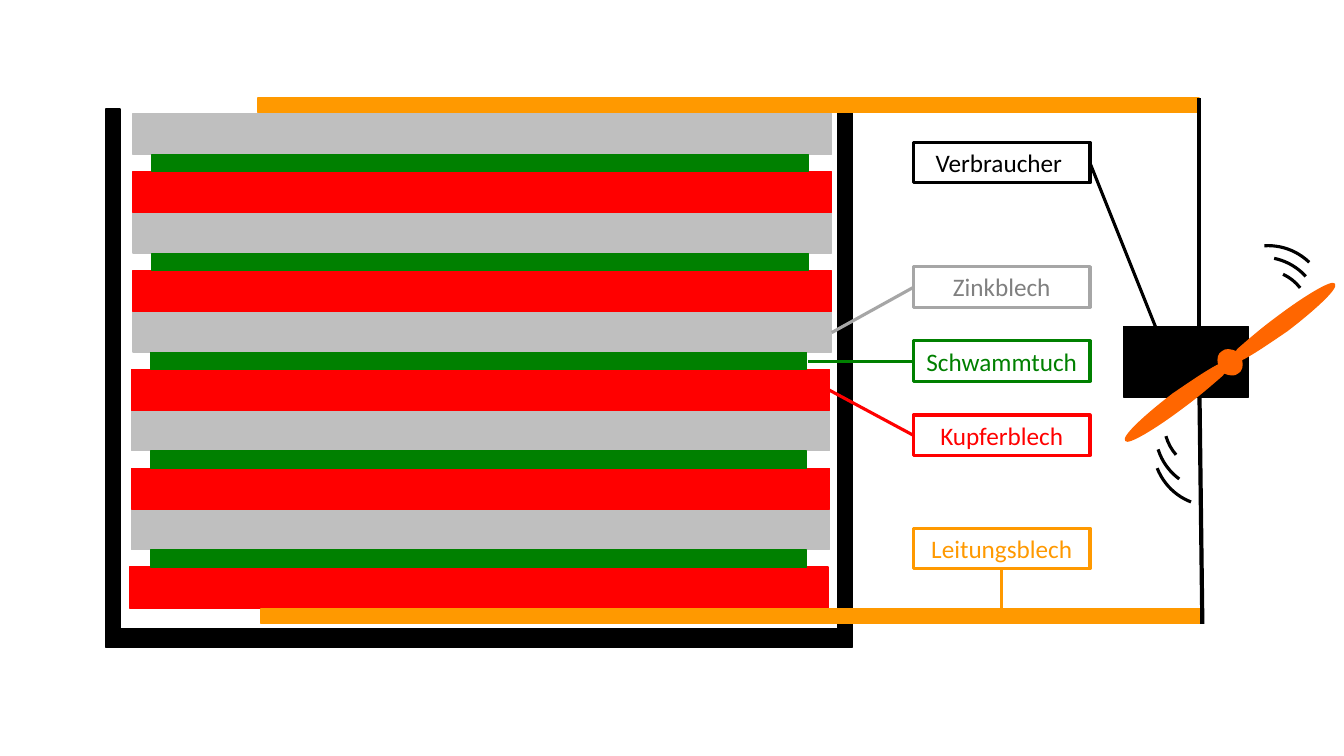
"""Build a slide showing a stacked zinc-copper battery that drives a propeller."""
import dataclasses

import lxml.etree
import pptx
import pptx.dml.color
import pptx.enum.shapes
import pptx.enum.text
import pptx.oxml.ns
import pptx.util

Cm = pptx.util.Cm
Pt = pptx.util.Pt
SHAPES = pptx.enum.shapes.MSO_SHAPE
qn = pptx.oxml.ns.qn


@dataclasses.dataclass(frozen=True)
class Theme:
    font: str = "Calibri"
    label_size: float = 18
    edge: float = 1
    stroke: float = 2.25
    wire: float = 3
    black: str = "000000"
    zinc: str = "BFBFBF"
    zinc_line: str = "A6A6A6"
    zinc_text: str = "808080"
    cloth: str = "008000"
    copper: str = "FF0000"
    conductor: str = "FF9900"
    propeller: str = "FF6600"


class Sketch:
    def __init__(self, slide, theme):
        self.shapes = slide.shapes
        self.theme = theme

    def color(self, value):
        return pptx.dml.color.RGBColor.from_string(value)

    def finish(self, shape, line, width, fill=None):
        shape.shadow.inherit = False
        shape.line.color.rgb = self.color(line)
        shape.line.width = Pt(width)
        if fill:
            shape.fill.solid()
            shape.fill.fore_color.rgb = self.color(fill)
        else:
            shape.fill.background()
        return shape

    def block(self, left, top, width, height, color):
        box = self.shapes.add_shape(
            SHAPES.RECTANGLE, Cm(left), Cm(top), Cm(width), Cm(height))
        return self.finish(box, color, self.theme.edge, color)

    def outline(self, segments, color):
        corners = [(Cm(x), Cm(y)) for segment in segments for x, y in segment]
        builder = self.shapes.build_freeform(*corners[0], scale=1.0)
        builder.add_line_segments(corners[1:], close=True)
        shape = builder.convert_to_shape()
        steps = iter(list(shape._element.iter(qn("a:lnTo"))))
        for segment in segments[1:]:
            first, *rest = [next(steps) for point in segment]
            if rest:
                first.tag = qn("a:cubicBezTo")
            for step in rest:
                first.append(step[0])
                step.getparent().remove(step)
        return self.finish(shape, color, self.theme.edge, color)

    def label(self, text, top, line, color):
        box = self.shapes.add_shape(
            SHAPES.RECTANGLE, Cm(23.02), Cm(top), Cm(4.45), Cm(1.02))
        self.finish(box, line, self.theme.stroke)
        frame = box.text_frame
        frame.word_wrap = True
        frame.auto_size = pptx.enum.text.MSO_AUTO_SIZE.SHAPE_TO_FIT_TEXT
        frame.vertical_anchor = pptx.enum.text.MSO_ANCHOR.TOP
        para = frame.paragraphs[0]
        para.alignment = pptx.enum.text.PP_ALIGN.CENTER
        span = para.add_run()
        span.text = text
        span.font.name = self.theme.font
        span.font.size = Pt(self.theme.label_size)
        span.font.color.rgb = self.color(color)

    def line(self, start, end, color, width):
        connector = self.shapes.add_connector(
            pptx.enum.shapes.MSO_CONNECTOR.STRAIGHT,
            Cm(start[0]), Cm(start[1]), Cm(end[0]), Cm(end[1]))
        connector.line.color.rgb = self.color(color)
        connector.line.width = Pt(width)
        lxml.etree.SubElement(connector._element.spPr, qn("a:effectLst"))

    def arc(self, left, top, width, height, rotation, stop):
        arc = self.shapes.add_shape(
            SHAPES.ARC, Cm(left), Cm(top), Cm(width), Cm(height))
        arc.adjustments[0] = 162
        arc.adjustments[1] = stop
        arc.rotation = rotation
        self.finish(arc, self.theme.black, self.theme.stroke)


def draw_battery(sketch, theme):
    container = [(2.67, 2.75), (3.03, 2.75), (3.03, 15.85), (21.11, 15.85),
                 (21.11, 2.75), (21.47, 2.75), (21.47, 16.31), (2.67, 16.31)]
    sketch.outline([[corner] for corner in container], theme.black)
    layers = [
        (0, 3.35, 2.86, 17.6, 1.03, theme.zinc),
        (2, 3.35, 4.33, 17.6, 1.03, theme.copper),
        (1, 3.83, 3.9, 16.54, 0.43, theme.cloth),
    ]
    for position, left, top, width, height, color in layers:
        for cell in range(5):
            drift = 0.04 * ((3 * cell + position) // 7)
            sketch.block(left - drift, top + 2.49 * cell, width, height, color)


def draw_circuit(sketch, theme):
    for left, top in [(6.58, 15.35), (6.5, 2.47)]:
        sketch.block(left, top, 23.72, 0.36, theme.conductor)
    for start, end in [((30.22, 8.89), (30.22, 2.47)), ((30.3, 15.72), (30.22, 9.32))]:
        sketch.line(start, end, theme.black, theme.wire)


def draw_labels(sketch, theme):
    labels = [
        ("Verbraucher ", 3.59, theme.black, theme.black, (27.47, 4.11), (29.29, 8.66)),
        ("Zinkblech", 6.72, theme.zinc_line, theme.zinc_text, (23.02, 7.24), (20.96, 8.38)),
        ("Schwammtuch", 8.59, theme.cloth, theme.cloth, (23.02, 9.1), (20.37, 9.1)),
        ("Kupferblech", 10.46, theme.copper, theme.copper, (23.02, 10.97), (20.9, 9.83)),
        ("Leitungsblech", 13.31, theme.conductor, theme.conductor,
         (25.24, 14.33), (25.24, 15.35)),
    ]
    for text, top, line, color, start, end in labels:
        sketch.label(text, top, line, color)
        sketch.line(start, end, line, theme.stroke)


def draw_motor(sketch, theme):
    sketch.block(28.32, 8.23, 3.15, 1.78, theme.black)
    half_propeller = [
        [(0.19, 0.27)],
        [(0.11, 0.34), (-0.01, 0.32), (-0.14, 0.27)],
        [(-0.15, 0.25)],
        [(-0.19, 0.32)],
        [(-0.42, 0.52), (-0.77, 0.83), (-1.18, 1.13)],
        [(-1.92, 1.69), (-2.58, 2.07), (-2.63, 1.97)],
        [(-2.71, 1.87), (-2.17, 1.36), (-1.44, 0.8)],
        [(-1, 0.5), (-0.62, 0.24), (-0.34, 0.09)],
        [(-0.27, 0.06)],
        [(-0.29, 0.04)],
        [(-0.32, -0.09), (-0.29, -0.22), (-0.19, -0.27)],
    ]
    propeller = [[(31 + side * x, 9.13 + side * y) for x, y in segment]
                 for side in (1, -1) for segment in half_propeller]
    sketch.outline(propeller, theme.propeller)
    motion_arcs = [
        (29.06, 9.63, 3.02, 3.12, 200.9, 189.48),
        (29.13, 9.25, 3.02, 3.12, 216.2, 182.65),
        (29.63, 8.02, 3.12, 4.14, 228.6, 170.98),
        (30.46, 6.19, 3.02, 3.12, 356.2, 189.48),
        (30.29, 6.48, 3.02, 3.12, 11.5, 182.65),
        (29.96, 6.73, 3.02, 4.27, 23.9, 170.98),
    ]
    for motion_arc in motion_arcs:
        sketch.arc(*motion_arc)


def main():
    deck = pptx.Presentation()
    deck.slide_width = Cm(33.87)
    deck.slide_height = Cm(19.05)
    page = deck.slides.add_slide(deck.slide_layouts[6])
    theme = Theme()
    sketch = Sketch(page, theme)
    for draw in (draw_battery, draw_circuit, draw_labels, draw_motor):
        draw(sketch, theme)
    deck.save("out.pptx")


if __name__ == "__main__":
    main()
